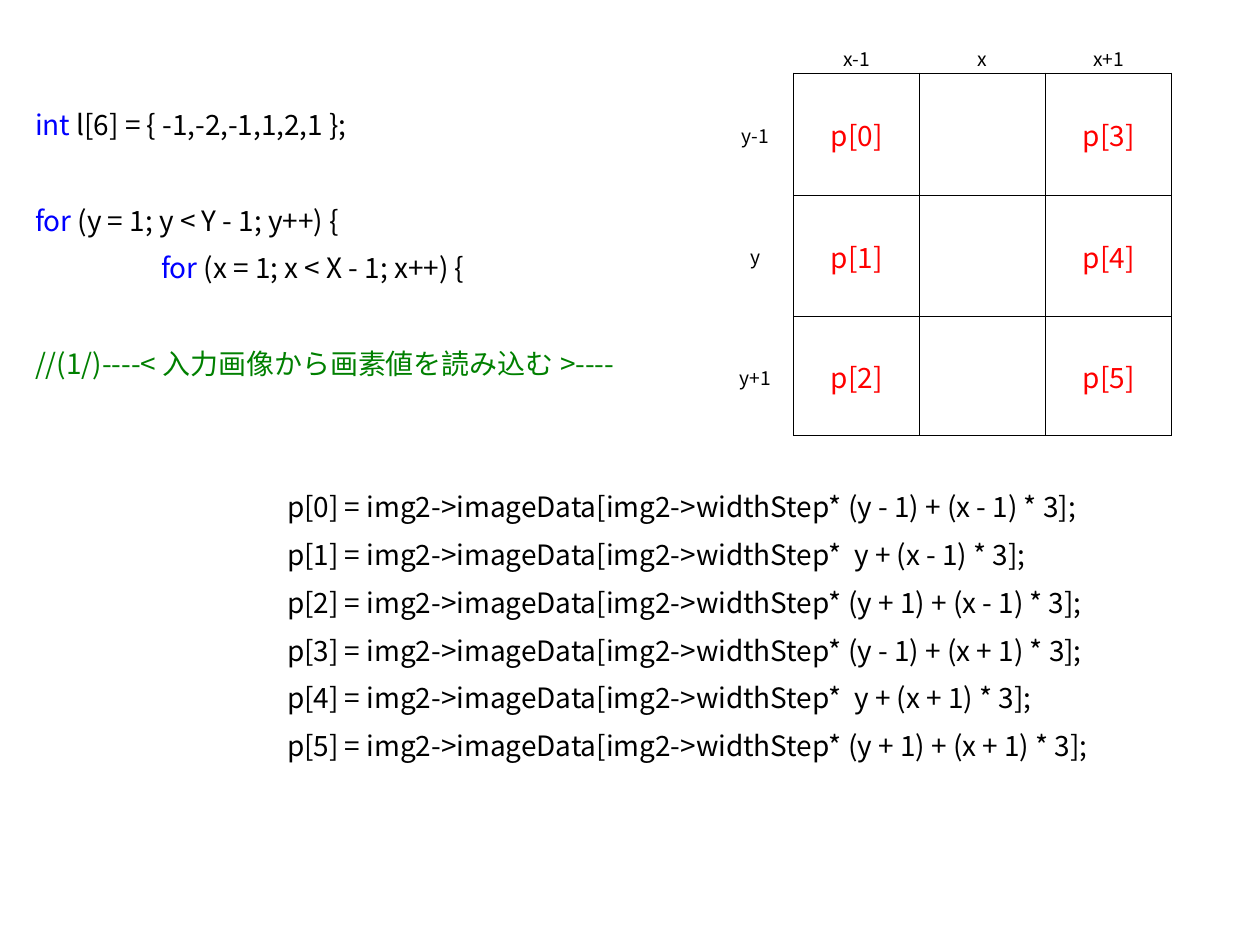
from lxml.etree import SubElement
from pptx import Presentation
from pptx.dml.color import RGBColor
from pptx.enum.text import MSO_ANCHOR, PP_ALIGN
from pptx.oxml import parse_xml
from pptx.oxml.ns import nsdecls, qn
from pptx.util import Emu, Inches, Pt

BLACK, BLUE, GREEN, RED = "000000", "0000FF", "008000", "FF0000"
FONT = "Noto Sans CJK JP"
CODE_SIZE, LABEL_SIZE = 16, 11
LINE_HEIGHT, LINE_GAP = 17.3, 10

ADDRESSES = [
    f"{row} + (x {sign} 1) * 3];"
    for sign in "-+"
    for row in ("(y - 1)", " y", "(y + 1)")
]
CODE = [
    (0, 0, [("int", BLUE), (" l[6] = { -1,-2,-1,1,2,1 };", BLACK)]),
    (0, 1, [("for", BLUE), (" (y = 1; y < Y - 1; y++) {", BLACK)]),
    (1, 0, [("for ", BLUE), ("(x = 1; x < X - 1; x++) {", BLACK)]),
    (0, 1, [("//(1/)----< 入力画像から画素値を読み込む >----", GREEN)]),
] + [
    (2, 0 if index else 2,
     [(f"p[{index}] = img2->imageData[img2->widthStep* {address}", BLACK)])
    for index, address in enumerate(ADDRESSES)
]
NEIGHBOURS = [
    ["", "x-1", "x", "x+1"],
    ["y-1", "p[0]", "", "p[3]"],
    ["y", "p[1]", "", "p[4]"],
    ["y+1", "p[2]", "", "p[5]"],
]


def color(value):
    """Turn a hex string into a colour."""
    return RGBColor.from_string(value)


def write(para, text, *, size=CODE_SIZE, fill=BLACK):
    """Add a formatted span of text to a paragraph."""
    span = para.add_run()
    span.text = text
    span.font.size = Pt(size)
    span.font.name = FONT
    span.font.color.rgb = color(fill)
    SubElement(span.font._element, qn("a:ea"), typeface=FONT)


class Page:
    """Hold the style and the current slide, measured on a 10 by 7.5 grid."""

    COLUMNS, ROWS = 10, 7.5

    def __init__(self, deck):
        """Add a blank slide to the deck."""
        self.deck = deck
        self.slide = deck.slides.add_slide(deck.slide_layouts[6])

    def across(self, columns):
        """Turn grid columns into a length."""
        return Emu(round(self.deck.slide_width * columns / self.COLUMNS))

    def down(self, rows):
        """Turn grid rows into a length."""
        return Emu(round(self.deck.slide_height * rows / self.ROWS))

    def place(self, left, top, width, height):
        """Turn a grid position and size into lengths."""
        return self.across(left), self.down(top), self.across(width), self.down(height)

    def code(self, lines, *area):
        """Add a listing of (indent, skipped lines, spans)."""
        box = self.slide.shapes.add_textbox(*self.place(*area))
        frame = box.text_frame
        frame.word_wrap = True
        frame.margin_top = self.down(0.07)
        for index, (indent, skipped, spans) in enumerate(lines):
            para = frame.add_paragraph() if index else frame.paragraphs[0]
            para.line_spacing = Pt(LINE_HEIGHT)
            para.space_before = Pt(LINE_GAP + skipped * (LINE_HEIGHT + LINE_GAP))
            para._p.get_or_add_pPr().set("marL", str(self.across(indent)))
            for text, fill in spans:
                write(para, text, fill=fill)

    def table(self, values, widths, heights, left, top):
        """Add a grid whose first row and column are outside labels."""
        area = self.place(left, top, sum(widths), sum(heights))
        table = self.slide.shapes.add_table(len(heights), len(widths), *area).table
        table.first_row = table.horz_banding = False
        for column, width in zip(table.columns, widths):
            column.width = self.across(width)
        for row, height in zip(table.rows, heights):
            row.height = self.down(height)
        for y, texts in enumerate(values):
            for x, text in enumerate(texts):
                edges = "LRTB" if x and y else "B" if x else "R" if y else ""
                self.cell(table.cell(y, x), text, edges, label=not (x and y))

    def cell(self, cell, text, edges, label):
        """Fill one table cell and draw its edges."""
        size, fill = (LABEL_SIZE, BLACK) if label else (CODE_SIZE, RED)
        cell.margin_left = cell.margin_right = cell.margin_top = self.down(0.01)
        cell.margin_bottom = 0
        cell.vertical_anchor = MSO_ANCHOR.MIDDLE
        cell.fill.background()
        para = cell.text_frame.paragraphs[0]
        para.alignment = PP_ALIGN.CENTER
        if text:
            write(para, text, size=size, fill=fill)
        SubElement(para._p, qn("a:endParaRPr"), sz=str(size * 100))
        for index, side in enumerate("LRTB"):
            paint = (f'<a:solidFill><a:srgbClr val="{BLACK}"/></a:solidFill>'
                     if side in edges else "<a:noFill/>")
            line = f'<a:ln{side} {nsdecls("a")} w="{Pt(0.5)}">{paint}</a:ln{side}>'
            cell._tc.get_or_add_tcPr().insert(index, parse_xml(line))


def main():
    """Build and save the deck."""
    deck = Presentation()
    deck.slide_width, deck.slide_height = Inches(10), Inches(7.5)
    page = Page(deck)
    page.code(CODE, 0.18, 0.81, 9.56, 6.28)
    page.table(NEIGHBOURS, [0.61, 1, 1, 1], [0.25, 0.97, 0.96, 0.95], 5.69, 0.33)
    deck.save("out.pptx")


if __name__ == "__main__":
    main()
